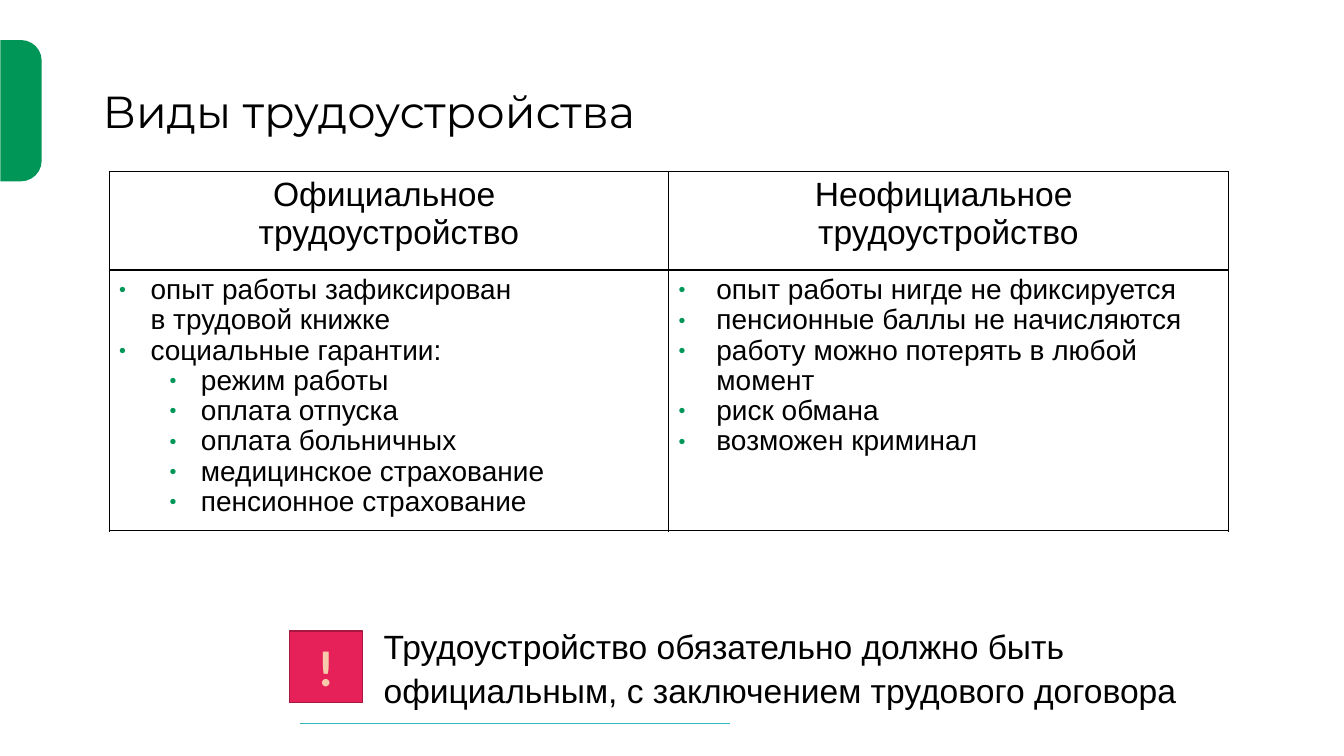
from lxml import etree
from pptx import Presentation
from pptx.dml.color import RGBColor
from pptx.enum import shapes, text
from pptx.oxml import ns
from pptx.util import Cm, Pt

BLACK = RGBColor(0x00, 0x00, 0x00)
GREEN = RGBColor(0x00, 0x96, 0x57)
TEAL = RGBColor(0x30, 0xB7, 0xBC)
RED = RGBColor(0xE6, 0x20, 0x59)
WINE = RGBColor(0xA7, 0x17, 0x40)
PEACH = RGBColor(0xF7, 0xCA, 0xAC)

LEFT, MID = text.PP_ALIGN.LEFT, text.PP_ALIGN.CENTER
HEADS = ["Официальное \nтрудоустройство", "Неофициальное \nтрудоустройство"]
# Each item: level, text
LISTS = [
    (0.79, [
        (0, "опыт работы зафиксирован\nв трудовой книжке"),
        (0, "социальные гарантии:"),
        (1, "режим работы"),
        (1, "оплата отпуска"),
        (1, "оплата больничных"),
        (1, "медицинское страхование"),
        (1, "пенсионное страхование"),
    ]),
    (0.95, [
        (0, "опыт работы нигде не фиксируется"),
        (0, "пенсионные баллы не начисляются"),
        (0, "работу можно потерять в любой момент"),
        (0, "риск обмана"),
        (0, "возможен криминал"),
    ]),
]
NOTE = ("Трудоустройство обязательно должно быть официальным, "
        "с заключением трудового договора")


def node(parent, tag, **attrs):
    return etree.SubElement(parent, ns.qn(tag), attrs)


def write(para, words, size, font="Arial", color=BLACK, bold=False,
          align=LEFT, gap=1.0):
    para.text = words
    para.alignment, para.line_spacing = align, gap
    look = {"size": Pt(size), "name": font, "bold": bold}
    for run in para.runs:
        for key, value in look.items():
            setattr(run.font, key, value)
        run.font.color.rgb = color


def frame(box):
    """Return the wrapped, vertically centred text frame of a shape."""
    body = box.text_frame
    look = {"word_wrap": True, "auto_size": text.MSO_AUTO_SIZE.NONE,
            "vertical_anchor": text.MSO_ANCHOR.MIDDLE}
    for key, value in look.items():
        setattr(body, key, value)
    return body


def bullet(para, level, hang):
    props = para._p.get_or_add_pPr()
    props.set("marL", str(Cm(hang + 1.27 * level)))
    props.set("indent", str(-Cm(hang)))
    node(node(props, "a:buClr"), "a:srgbClr", val=str(GREEN))
    node(props, "a:buSzPct", val="70000")
    node(props, "a:buFont", typeface="Arial")
    node(props, "a:buChar", char="•")
    para.level = level


def edge(cell):
    """Clear the fill and draw black borders, heavier below."""
    props = cell._tc.get_or_add_tcPr()
    for side, width in (("L", 1), ("R", 1), ("T", 1), ("B", 1.5)):
        line = node(props, f"a:ln{side}", w=str(Pt(width)))
        node(node(line, "a:solidFill"), "a:srgbClr", val=str(BLACK))
    cell.fill.background()


def block(slide, kind, place, fill, line=None):
    shape = slide.shapes.add_shape(kind, *map(Cm, place))
    shape.shadow.inherit = False
    shape.fill.solid()
    shape.fill.fore_color.rgb = fill
    if line is None:
        shape.line.fill.background()
    else:
        shape.line.color.rgb = line
        shape.line.width = Pt(1)
    return shape


def rule(slide, left, right, top):
    line = slide.shapes.add_connector(
        shapes.MSO_CONNECTOR.STRAIGHT, Cm(left), Cm(top), Cm(right), Cm(top))
    line.line.color.rgb = TEAL
    line.line.width = Pt(0.75)
    node(line._element.spPr, "a:effectLst")


def title(slide, words):
    box = slide.shapes.title
    spot = {"left": 2.33, "top": 1.02, "width": 29.21, "height": 3.68}
    for key, value in spot.items():
        setattr(box, key, Cm(value))
    write(frame(box).paragraphs[0], words, 32, "Montserrat", gap=0.9)


def grid(slide):
    table = slide.shapes.add_table(
        2, 2, Cm(2.75), Cm(4.32), Cm(28.2), Cm(9.05)).table
    table.first_row = table.horz_banding = False
    for row, high in zip(table.rows, (2.49, 6.56)):
        row.height = Cm(high)
    for col, (head, (hang, items)) in enumerate(zip(HEADS, LISTS)):
        top, low = table.cell(0, col), table.cell(1, col)
        write(top.text_frame.paragraphs[0], head, 24, align=MID)
        body = low.text_frame
        for i, (level, words) in enumerate(items):
            para = body.add_paragraph() if i else body.paragraphs[0]
            write(para, words, 20, gap=0.97)
            bullet(para, level, hang)
        edge(top)
        edge(low)


def notice(slide):
    mark = block(slide, shapes.MSO_SHAPE.RECTANGLE,
                 (7.29, 15.9, 1.85, 1.8), RED, WINE)
    write(frame(mark).paragraphs[0], "!", 36, "Calibri", PEACH, True, MID)
    box = slide.shapes.add_textbox(Cm(9.42), Cm(15.9), Cm(21.54), Cm(1.8))
    write(frame(box).paragraphs[0], NOTE, 24, gap=1.07)


def main():
    deck = Presentation()
    deck.slide_width, deck.slide_height = Cm(33.87), Cm(19.05)
    slide = deck.slides.add_slide(deck.slide_layouts[5])
    rule(slide, 7.57, 18.39, 18.24)
    tab = block(slide, shapes.MSO_SHAPE.ROUND_2_SAME_RECTANGLE,
                (-1.25, 2.27, 3.56, 1.04), GREEN)
    tab.rotation = 90
    tab.adjustments[0], tab.adjustments[1] = 0.5, 0
    title(slide, "Виды трудоустройства")
    grid(slide)
    notice(slide)
    deck.save("out.pptx")


if __name__ == "__main__":
    main()
